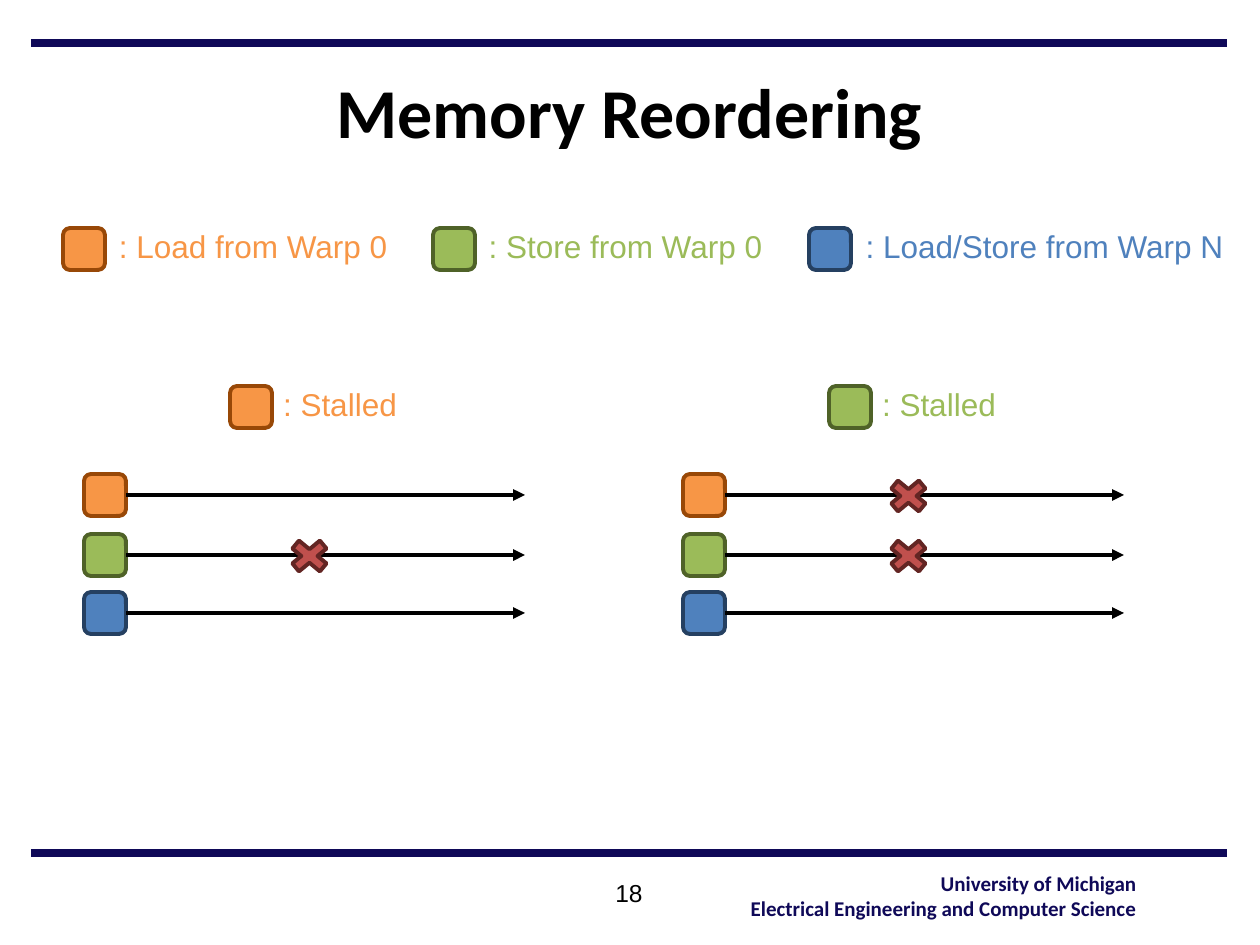
from dataclasses import dataclass

from lxml import etree
from pptx import Presentation
from pptx.dml.color import RGBColor
from pptx.enum.shapes import MSO_CONNECTOR, MSO_SHAPE
from pptx.enum.text import MSO_ANCHOR, PP_ALIGN
from pptx.oxml.ns import qn
from pptx.util import Pt

PX = 914400 / 126
ROUND, CROSS = MSO_SHAPE.ROUNDED_RECTANGLE, MSO_SHAPE.MATH_MULTIPLY
STRAIGHT = MSO_CONNECTOR.STRAIGHT
CENTER, RIGHT = PP_ALIGN.CENTER, PP_ALIGN.RIGHT
TOP, MIDDLE = MSO_ANCHOR.TOP, MSO_ANCHOR.MIDDLE


@dataclass(frozen=True)
class Theme:
    """Colours as (fill, line) pairs, fonts, type sizes and line widths."""
    load: tuple = ("F79646", "984807")
    store: tuple = ("9BBB59", "4F6228")
    other: tuple = ("4F81BD", "254061")
    block: tuple = ("C0504D", "632523")
    navy: str = "0F0958"
    black: str = "000000"
    head: str = "Calibri"
    body: str = "Arial"
    title: int = 40
    label: int = 18
    page: int = 14
    foot: int = 12
    rule: float = 5
    line: float = 2.25


T = Theme()
KEY = 42


def emu(*vals):
    """Turn px lengths into EMU."""
    return [round(v * PX) for v in vals]


def text(slide, box, words, size=T.label, font=T.body, color=T.black,
         bold=False, align=CENTER, anchor=TOP, wrap=False):
    """Write one paragraph per line of words in a text box."""
    frame = slide.shapes.add_textbox(*emu(*box)).text_frame
    frame.word_wrap = wrap
    frame.vertical_anchor = anchor
    for i, line in enumerate(words.split("\n")):
        para = frame.add_paragraph() if i else frame.paragraphs[0]
        para.alignment = align
        run = para.add_run()
        run.text = line
        run.font.name, run.font.size, run.font.bold = font, Pt(size), bold
        run.font.color.rgb = RGBColor.from_string(color)


def mark(slide, kind, box, pair):
    """Draw a filled and outlined preset shape."""
    shape = slide.shapes.add_shape(kind, *emu(*box))
    shape.shadow.inherit = False
    shape.fill.solid()
    shape.fill.fore_color.rgb = RGBColor.from_string(pair[0])
    shape.line.color.rgb = RGBColor.from_string(pair[1])
    shape.line.width = Pt(T.line)


def rule(slide, x, y, width, color=T.black, weight=T.line, arrow=False):
    """Draw a level line, with an arrowhead at its right end if asked."""
    line = slide.shapes.add_connector(STRAIGHT, *emu(x, y, x + width, y))
    line.line.color.rgb = RGBColor.from_string(color)
    line.line.width = Pt(weight)
    if arrow:
        etree.SubElement(line.line._get_or_add_ln(), qn("a:tailEnd"), type="triangle")
    etree.SubElement(line._element.spPr, qn("a:effectLst"))


def entry(slide, x, y, width, pair, words, gap=KEY):
    """Place a coloured key with its label to the right."""
    mark(slide, ROUND, (x, y, KEY, KEY), pair)
    text(slide, (x + gap, y - 7, width, 50), words, color=pair[0])


def legend(slide, x, y):
    """Place the three keys of the request kinds."""
    for dx, width, pair, words in (
        (0, 296, T.load, ": Load from Warp 0"),
        (370, 301, T.store, ": Store from Warp 0"),
        (746, 387, T.other, ": Load/Store from Warp N"),
    ):
        entry(slide, x + dx, y, width, pair, words)


def panel(slide, x, y, stalled, blocked):
    """Place a stalled request and the arrows of those that follow it."""
    entry(slide, x + 146, y, 140, stalled, ": Stalled", gap=40)
    for dy, pair in ((88, T.load), (148, T.store), (206, T.other)):
        top = y + dy
        mark(slide, ROUND, (x, top, KEY, KEY), pair)
        rule(slide, x + KEY, top + KEY // 2, 399, arrow=True)
        if pair in blocked:
            mark(slide, CROSS, (x + 199, top, 53, 44), T.block)


def frame(slide, x, width):
    """Place the rules, title, page number and footer."""
    for y in (43, 853):
        rule(slide, x, y, width, T.navy, T.rule)
    text(slide, (x + 63, 53, 1071, 115), "Memory Reordering", size=T.title,
         font=T.head, bold=True, anchor=MIDDLE, wrap=True)
    text(slide, (x + 467, 872, 262, 63), "18", size=T.page, wrap=True)
    text(slide, (x + 702, 864, 416, 63),
         "University of Michigan\nElectrical Engineering and Computer Science",
         size=T.foot, font=T.head, color=T.navy, bold=True, align=RIGHT)


def main():
    """Build and save the slide."""
    deck = Presentation()
    deck.slide_width, deck.slide_height = emu(1260, 945)
    slide = deck.slides.add_slide(deck.slide_layouts[6])
    frame(slide, 31, 1196)
    legend(slide, 63, 228)
    panel(slide, 84, 386, T.load, (T.store,))
    panel(slide, 683, 386, T.store, (T.load, T.store))
    deck.save("out.pptx")


if __name__ == "__main__":
    main()
